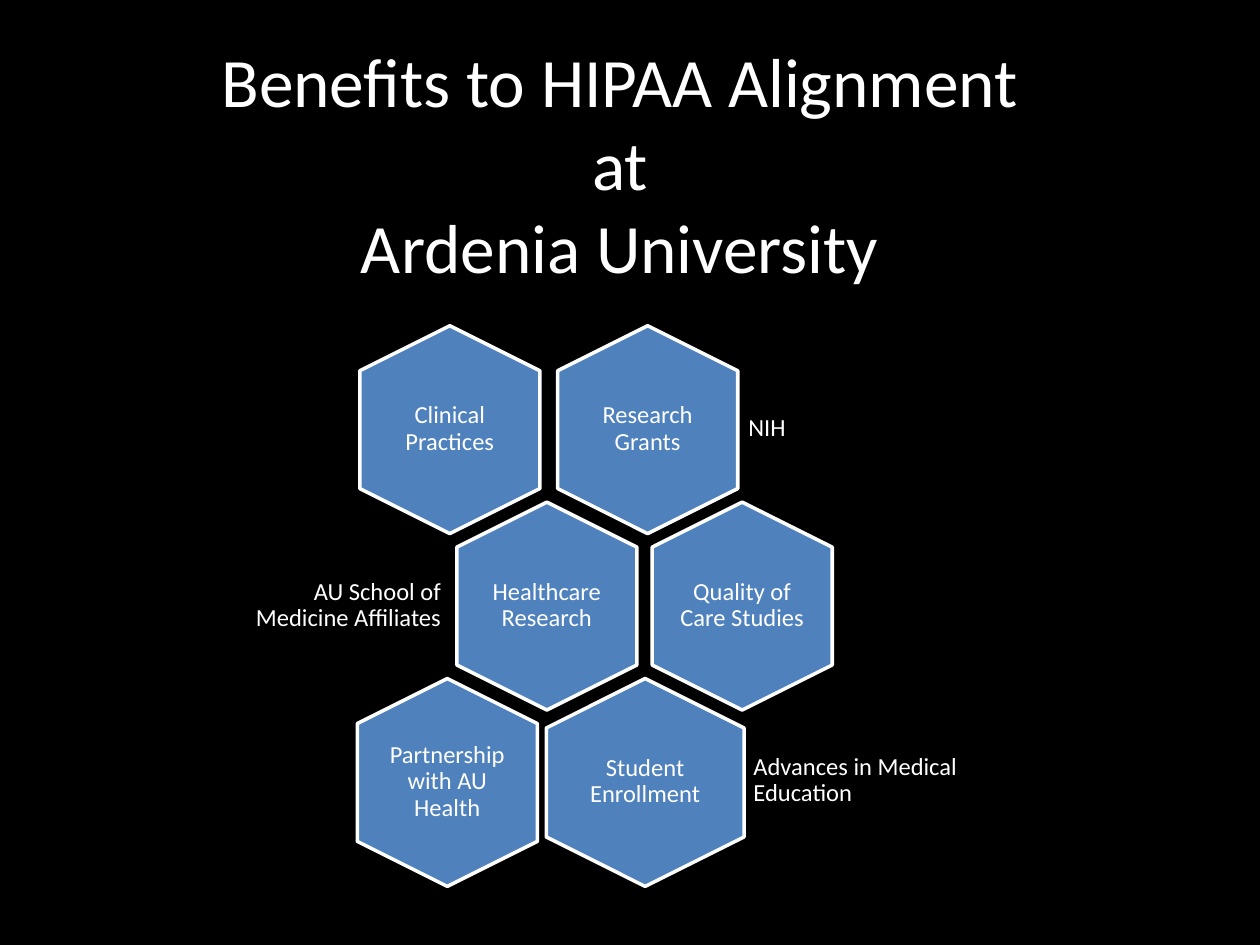
from pptx import Presentation
from pptx.dml.color import RGBColor
from pptx.enum.shapes import MSO_SHAPE as Shape
from pptx.enum.text import MSO_ANCHOR as Anchor, PP_ALIGN as Align
from pptx.util import Inches, Pt

BLACK = RGBColor(0x00, 0x00, 0x00)
WHITE = RGBColor(0xFF, 0xFF, 0xFF)
BLUE = RGBColor(0x4F, 0x81, 0xBD)

FIRST_ROW = 3.41
ROW_STEP = 1.4
HEXAGON_LENGTH = 1.65
HEXAGON_WIDTH = 1.43

HEXAGONS = [
    ("Research Grants", 5.14, 0, HEXAGON_WIDTH),
    ("Clinical Practices", 3.57, 0, HEXAGON_WIDTH),
    ("Healthcare Research", 4.34, 1, HEXAGON_WIDTH),
    ("Quality of Care Studies", 5.89, 1, HEXAGON_WIDTH),
    ("Student Enrollment", 5.12, 2, 1.57),
    ("Partnership with AU Health", 3.55, 2, HEXAGON_WIDTH),
]
NOTES = [
    ("NIH", 5.88, 2.91, 1.84, Align.LEFT),
    ("AU School of Medicine Affiliates", 1.78, 4.31, 1.78, Align.RIGHT),
    ("Advances in Medical Education", 5.92, 5.7, 1.84, Align.LEFT),
]


def write_text(frame, text, size=14, align=Align.CENTER, anchor=Anchor.MIDDLE,
               spacing=0.9, inset=0.0, inset_y=None):
    frame.word_wrap = True
    frame.vertical_anchor = anchor
    frame.margin_left = frame.margin_right = Inches(inset)
    frame.margin_top = frame.margin_bottom = Inches(inset if inset_y is None else inset_y)
    para = frame.paragraphs[0]
    para.text = text
    para.alignment = align
    para.line_spacing = spacing
    for span in para.runs:
        span.font.name = "Calibri"
        span.font.size = Pt(size)
        span.font.color.rgb = WHITE


class SlideBuilder:
    def __init__(self, page):
        self.page = page
        self.fill = BLUE
        self.outline = WHITE
        self.outline_width = Pt(2)

    def background(self, color):
        fill = self.page.background.fill
        fill.solid()
        fill.fore_color.rgb = color

    def text(self, text, left, top, width, height, **style):
        box = self.page.shapes.add_textbox(
            Inches(left), Inches(top), Inches(width), Inches(height))
        write_text(box.text_frame, text, **style)

    def hexagon(self, label, center_x, center_y, width):
        hexagon = self.page.shapes.add_shape(
            Shape.HEXAGON,
            Inches(center_x - HEXAGON_LENGTH / 2), Inches(center_y - width / 2),
            Inches(HEXAGON_LENGTH), Inches(width))
        hexagon.rotation = 90
        hexagon.adjustments[0] = 0.25
        hexagon.shadow.inherit = False
        hexagon.fill.solid()
        hexagon.fill.fore_color.rgb = self.fill
        hexagon.line.color.rgb = self.outline
        hexagon.line.width = self.outline_width
        self.text(label, center_x - 0.5, center_y - 0.57, 1, 1.13)


def main():
    deck = Presentation()
    deck.slide_width = Inches(10)
    deck.slide_height = Inches(7.5)
    builder = SlideBuilder(deck.slides.add_slide(deck.slide_layouts[6]))
    builder.background(BLACK)
    builder.text("Benefits to HIPAA Alignment\nat\nArdenia University",
                 0.42, 0.25, 9, 1.95, size=39.6, anchor=Anchor.TOP,
                 spacing=1.0, inset=0.1, inset_y=0.05)
    for label, center_x, row, width in HEXAGONS:
        builder.hexagon(label, center_x, FIRST_ROW + row * ROW_STEP, width)
    for note, left, top, width, align in NOTES:
        builder.text(note, left, top, width, 0.99, align=align, inset=0.06)
    deck.save("out.pptx")


if __name__ == "__main__":
    main()
